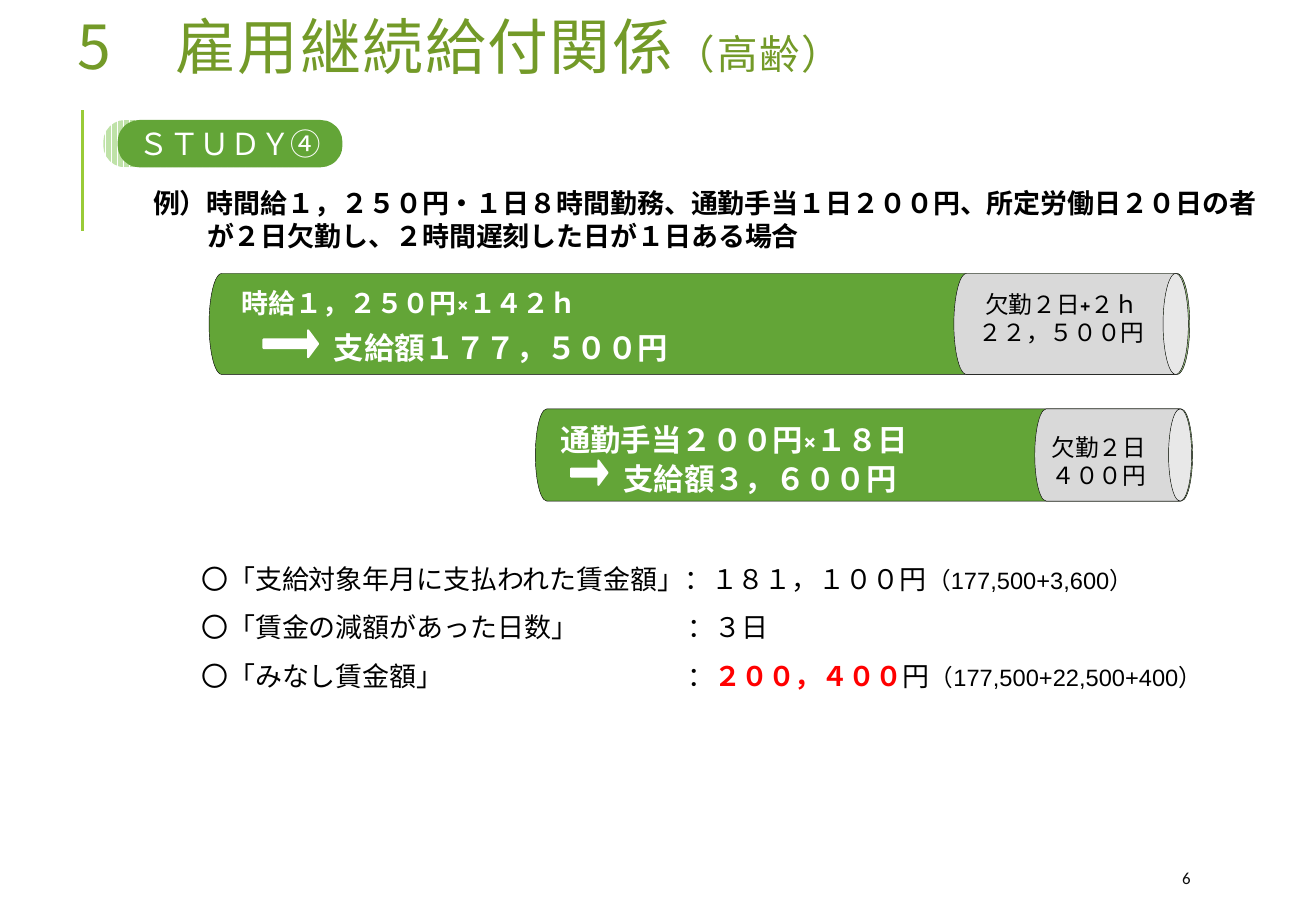
from lxml.etree import SubElement
from pptx import Presentation
from pptx.dml.color import RGBColor
from pptx.enum.dml import MSO_PATTERN
from pptx.enum.shapes import MSO_CONNECTOR, MSO_SHAPE
from pptx.enum.text import MSO_ANCHOR as Anchor, PP_ALIGN as Align
from pptx.oxml.ns import qn
from pptx.util import Cm, Pt

GREEN = RGBColor(0x63, 0xA5, 0x37)
LIME = RGBColor(0x99, 0xCB, 0x38)
OLIVE = RGBColor(0x73, 0x9A, 0x28)
PALE = RGBColor(0xBF, 0xE2, 0xA8)
GREY = RGBColor(0xD9, 0xD9, 0xD9)
WHITE = RGBColor(0xFF, 0xFF, 0xFF)
BLACK = RGBColor(0, 0, 0)
INK = RGBColor(0x0D, 0x0D, 0x0D)
RED = RGBColor(0xFF, 0, 0)


def write(frame, rows, anchor=Anchor.TOP, align=Align.LEFT, space=None, **fmt):
    """Fill a frame; a row is a string or a list of (text, format) runs."""
    frame.word_wrap = True
    frame.vertical_anchor = anchor
    for i, row in enumerate(rows):
        para = frame.paragraphs[0] if i == 0 else frame.add_paragraph()
        para.alignment = align
        para.line_spacing = space
        for text, own in [(row, {})] if isinstance(row, str) else row:
            run = para.add_run()
            run.text = text
            style(run, **{**fmt, **own})


def style(run, size=16, color=BLACK, bold=False, face="Cabin", track=None):
    font = run.font
    font.size, font.bold, font.name = Pt(size), bold, face
    font.color.rgb = color
    props = run._r.get_or_add_rPr()
    SubElement(props, qn("a:ea")).set("typeface", face)
    if track:
        props.set("spc", str(track * 100))


def label(slide, box, rows, **fmt):
    frame = slide.shapes.add_textbox(*map(Cm, box)).text_frame
    write(frame, rows, **fmt)
    return frame


def indent(para, left, first):
    props = para._p.get_or_add_pPr()
    props.set("marL", str(Cm(left)))
    props.set("indent", str(Cm(first)))


def tab(para, pos):
    stops = SubElement(para._p.get_or_add_pPr(), qn("a:tabLst"))
    stop = SubElement(stops, qn("a:tab"))
    stop.set("pos", str(Cm(pos)))
    stop.set("algn", "l")


def draw(slide, kind, box, fill=None, line=None, width=0.25, adj=()):
    shape = slide.shapes.add_shape(kind, *map(Cm, box))
    shape.shadow.inherit = False
    for i, value in enumerate(adj):
        shape.adjustments[i] = value
    if fill is not None:
        shape.fill.solid()
        shape.fill.fore_color.rgb = fill
    if line is None:
        shape.line.fill.background()
    else:
        shape.line.color.rgb = line
        shape.line.width = Pt(width)
    return shape


def tube(slide, left, top, width, height, fill):
    """Draw a can lying on its side within the given box."""
    shift = (width - height) / 2
    box = (left + shift, top - shift, height, width)
    draw(slide, MSO_SHAPE.CAN, box, fill, BLACK).rotation = 90


def arrow(slide, box):
    draw(slide, MSO_SHAPE.RIGHT_ARROW, box, WHITE, WHITE, 1.25, (0.331, 0.373))


def rule(slide, x, top, end):
    line = slide.shapes.add_connector(
        MSO_CONNECTOR.STRAIGHT, Cm(x), Cm(end), Cm(x), Cm(top))
    line.line.color.rgb = LIME
    line.line.width = Pt(1.5)
    SubElement(line._element.spPr, qn("a:effectLst"))


def head(slide):
    title = slide.shapes.title
    title.left, title.top, title.width, title.height = map(
        Cm, (1.37, 0, 24.38, 2.16))
    row = [("5　雇用継続給付関係", {}), ("（高齢）", {"size": 24})]
    write(title.text_frame, [row], anchor=Anchor.MIDDLE, space=0.8, size=36,
          color=OLIVE, face="Noto Sans CJK JP", track=1)


def badge(slide):
    kind, adj = MSO_SHAPE.ROUNDED_RECTANGLE, (0.462,)
    back = draw(slide, kind, (2.16, 2.51, 4.52, 0.99), adj=adj)
    back.fill.patterned()
    back.fill.pattern = MSO_PATTERN.DARK_VERTICAL
    back.fill.fore_color.rgb = PALE
    back.fill.back_color.rgb = WHITE
    front = draw(slide, kind, (2.46, 2.51, 4.7, 0.99), GREEN, adj=adj)
    write(front.text_frame, ["ＳＴＵＤＹ④"], anchor=Anchor.MIDDLE,
          align=Align.CENTER, size=18, color=WHITE, face="Arial")


def case(slide):
    rows = ["例）時間給１，２５０円・１日８時間勤務、通勤手当１日２００円、所定労働日２０日の者",
            "が２日欠勤し、２時間遅刻した日が１日ある場合"]
    frame = label(slide, (2.95, 3.78, 24.56, 1.63), rows, bold=True)
    for para, first in zip(frame.paragraphs, (-1.13, 0)):
        indent(para, 1.13, first)


def wage(slide):
    top, high = 5.72, 2.11
    bright = {"color": WHITE, "bold": True}
    tube(slide, 4.37, top, 20.5, high, GREEN)
    tube(slide, 19.94, top, 4.9, high, GREY)
    label(slide, (4.8, 5.87, 14, 0.94), ["時給１，２５０円×１４２ｈ"], **bright)
    label(slide, (20.19, 5.94, 4.01, 1.45), ["欠勤２日+２ｈ", "２２，５００円"],
          align=Align.CENTER, size=14)
    arrow(slide, (5.51, 6.91, 1.14, 0.56))
    label(slide, (6.73, 6.76, 8, 1.02), ["支給額１７７，５００円"], size=18, **bright)


def fare(slide):
    top, high = 8.55, 1.93
    bright = {"color": WHITE, "bold": True, "size": 18}
    tube(slide, 11.19, top, 13.74, high, GREEN)
    tube(slide, 21.63, top, 3.28, high, GREY)
    label(slide, (11.46, 8.69, 9, 0.81), ["通勤手当２００円×１８日"], **bright)
    label(slide, (21.4, 8.92, 3.15, 1.17), ["欠勤２日", "４００円"],
          align=Align.CENTER, size=14)
    arrow(slide, (11.94, 9.63, 0.76, 0.51))
    label(slide, (12.78, 9.5, 7, 0.81), ["支給額３，６００円"], **bright)


def result(slide):
    small = {"size": 14, "face": "Arial"}
    rows = [
        [("〇「支給対象年月に支払われた賃金額」：１８１，１００円", {}),
         ("（177,500+3,600）", small)],
        "〇「賃金の減額があった日数」\t：３日",
        [("〇「みなし賃金額」\t：", {}),
         ("２００，４００", {"color": RED, "bold": True}),
         ("円", {}), ("（177,500+22,500+400）", small)],
    ]
    frame = label(slide, (3.96, 11.3, 23.3, 3.45), rows, space=1.5)
    for para in frame.paragraphs[1:]:
        tab(para, 10.16)


def main():
    deck = Presentation()
    deck.slide_width, deck.slide_height = Cm(27.51), Cm(19.05)
    slide = deck.slides.add_slide(deck.slide_layouts[5])
    rule(slide, 1.73, 2.29, 4.83)
    head(slide)
    badge(slide)
    case(slide)
    wage(slide)
    fare(slide)
    result(slide)
    label(slide, (24.46, 17.98, 2.21, 0.76), ["6"], anchor=Anchor.MIDDLE,
          size=10, color=INK, face="Calibri")
    deck.save("out.pptx")


if __name__ == "__main__":
    main()
